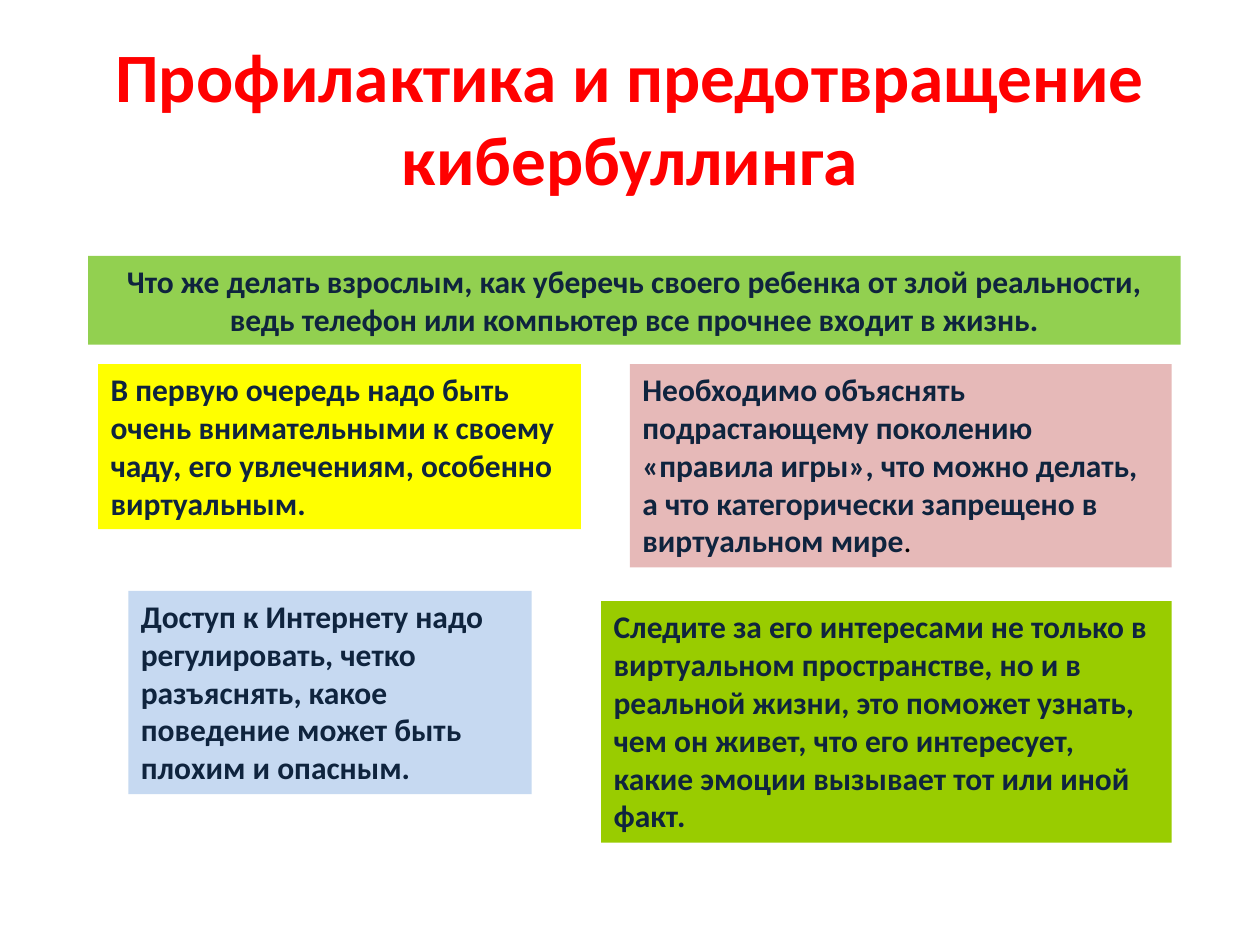
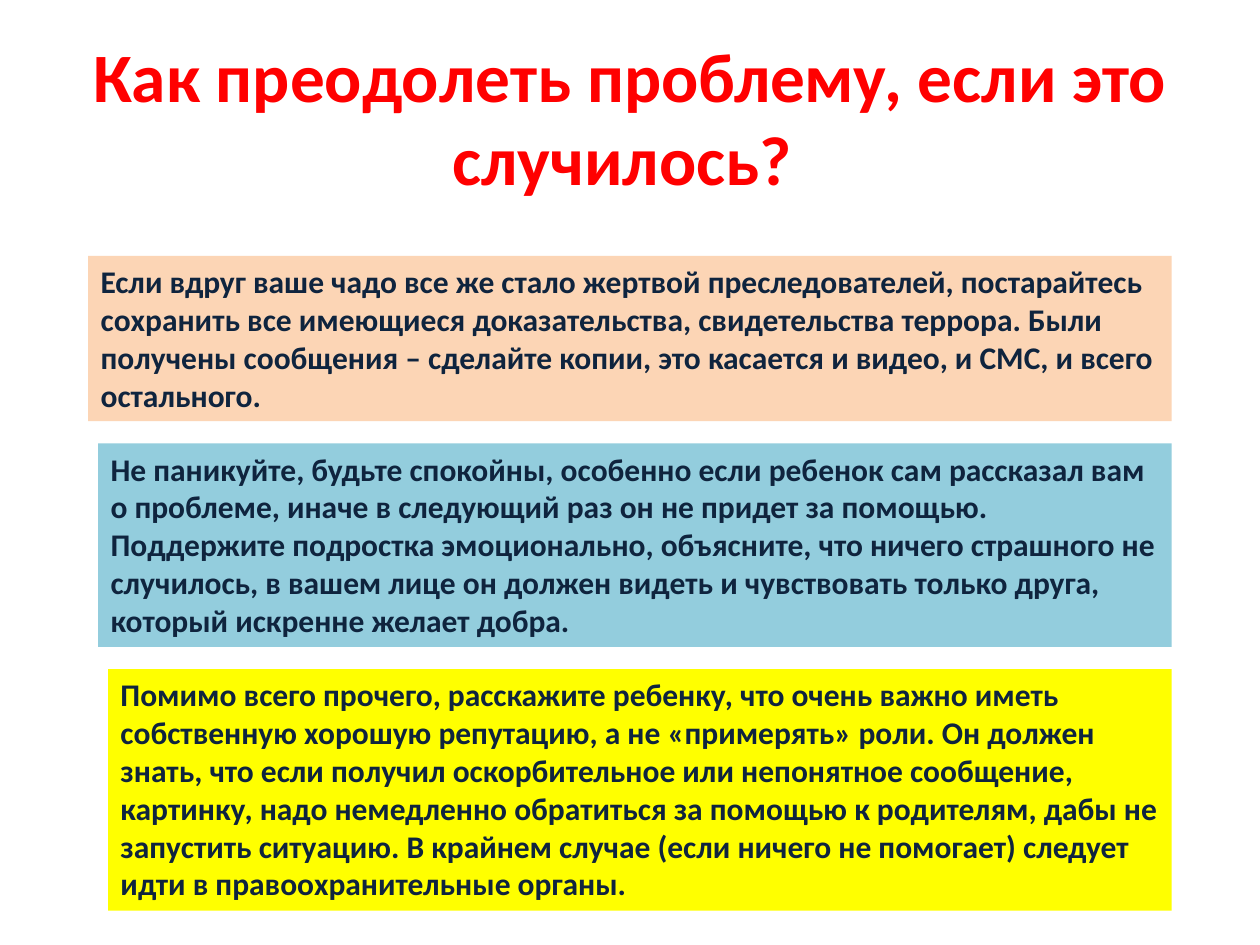
from pptx import Presentation
from pptx.dml.color import RGBColor
from pptx.enum.text import MSO_ANCHOR as Anchor, MSO_AUTO_SIZE as AutoSize, PP_ALIGN as Align
from pptx.util import Cm, Pt

RED = RGBColor(0xFF, 0x00, 0x00)
NAVY = RGBColor(0x0F, 0x24, 0x3E)
BLACK = RGBColor(0x00, 0x00, 0x00)
GREEN = RGBColor(0x92, 0xD0, 0x50)
YELLOW = RGBColor(0xFF, 0xFF, 0x00)
ROSE = RGBColor(0xE6, 0xB9, 0xB8)
PALE_BLUE = RGBColor(0xC6, 0xD9, 0xF1)
LIME = RGBColor(0x99, 0xCC, 0x00)
PEACH = RGBColor(0xFC, 0xD5, 0xB5)
AQUA = RGBColor(0x93, 0xCD, 0xDD)

TITLE_FORMAT = {"name": "Calibri", "size": Pt(39.6), "bold": True}
ADVICE_FORMAT = {"name": "Calibri", "size": Pt(18), "bold": True}
PLAIN_FORMAT = {"name": "Calibri", "size": Pt(18), "bold": False}

TITLE_PLACE = {"left": Cm(1.27), "top": Cm(0.76), "width": Cm(22.86), "height": Cm(3.18)}
FIRST_TOP = 5.16
LINE_HEIGHT = 0.77
BOX_MARGINS = 0.25
RIGHT_EDGE = 23.62

slides = [
    ("Профилактика и предотвращение кибербуллинга", [
        (1.78, FIRST_TOP, 23.8, 2, GREEN, Align.CENTER,
         "Что же делать взрослым, как уберечь своего ребенка от злой реальности, "
         "ведь телефон или компьютер все прочнее входит в жизнь.", ""),
        (1.98, 7.34, 11.71, 4, YELLOW, Align.LEFT,
         "В первую очередь надо быть очень внимательными к своему чаду, "
         "его увлечениям, особенно виртуальным.", ""),
        (12.7, 7.34, RIGHT_EDGE, 5, ROSE, Align.LEFT,
         "Необходимо объяснять подрастающему поколению «правила игры», "
         "что можно делать, а что категорически запрещено в виртуальном мире", "."),
        (2.59, 11.91, 10.72, 5, PALE_BLUE, Align.LEFT,
         "Доступ к Интернету надо регулировать, четко разъяснять, "
         "какое поведение может быть плохим и опасным.", ""),
        (12.12, 12.12, RIGHT_EDGE, 6, LIME, Align.LEFT,
         "Следите за его интересами не только в виртуальном пространстве, "
         "но и в реальной жизни, это поможет узнать, чем он живет, "
         "что его интересует, какие эмоции вызывает тот или иной факт.", ""),
    ]),
    ("Как преодолеть проблему, если это случилось? ", [
        (1.78, FIRST_TOP, RIGHT_EDGE, 4, PEACH, Align.LEFT,
         "Если вдруг ваше чадо все же стало жертвой преследователей, постарайтесь "
         "сохранить все имеющиеся доказательства, свидетельства террора. Были "
         "получены сообщения – сделайте копии, это касается и видео, и СМС, "
         "и всего остального.", ""),
        (1.98, 8.94, RIGHT_EDGE, 5, AQUA, Align.LEFT,
         "Не паникуйте, будьте спокойны, особенно если ребенок сам рассказал вам "
         "о проблеме, иначе в следующий раз он не придет за помощью. "
         "Поддержите подростка эмоционально, объясните, что ничего страшного не "
         "случилось, в вашем лице он должен видеть и чувствовать только друга, "
         "который искренне желает добра.", ""),
        (2.18, 13.49, RIGHT_EDGE, 6, YELLOW, Align.LEFT,
         "Помимо всего прочего, расскажите ребенку, что очень важно иметь "
         "собственную хорошую репутацию, а не «примерять» роли. Он должен "
         "знать, что если получил оскорбительное или непонятное сообщение, "
         "картинку, надо немедленно обратиться за помощью к родителям, дабы не "
         "запустить ситуацию. В крайнем случае (если ничего не помогает) следует "
         "идти в правоохранительные органы.", ""),
    ]),
]


def add_run(paragraph, text, text_format, color):
    run = paragraph.add_run()
    run.text = text
    for attribute, value in text_format.items():
        setattr(run.font, attribute, value)
    run.font.color.rgb = color


presentation = Presentation()
presentation.slide_width = Cm(25.4)
presentation.slide_height = Cm(19.05)
title_only = presentation.slide_layouts.get_by_name("Title Only")

for heading, advice_boxes in slides:
    slide = presentation.slides.add_slide(title_only)
    title = slide.shapes.title
    for attribute, value in TITLE_PLACE.items():
        setattr(title, attribute, value)
    title.text_frame.vertical_anchor = Anchor.MIDDLE
    paragraph = title.text_frame.paragraphs[0]
    paragraph.alignment = Align.CENTER
    add_run(paragraph, heading, TITLE_FORMAT, RED)

    for left, top, right, lines, fill, alignment, advice, ending in advice_boxes:
        height = BOX_MARGINS + lines * LINE_HEIGHT
        shape = slide.shapes.add_textbox(Cm(left), Cm(top), Cm(right - left), Cm(height))
        shape.fill.solid()
        shape.fill.fore_color.rgb = fill
        shape.text_frame.word_wrap = True
        shape.text_frame.auto_size = AutoSize.SHAPE_TO_FIT_TEXT
        paragraph = shape.text_frame.paragraphs[0]
        paragraph.alignment = alignment
        add_run(paragraph, advice, ADVICE_FORMAT, NAVY)
        if ending:
            add_run(paragraph, ending, PLAIN_FORMAT, BLACK)

presentation.save("out.pptx")
